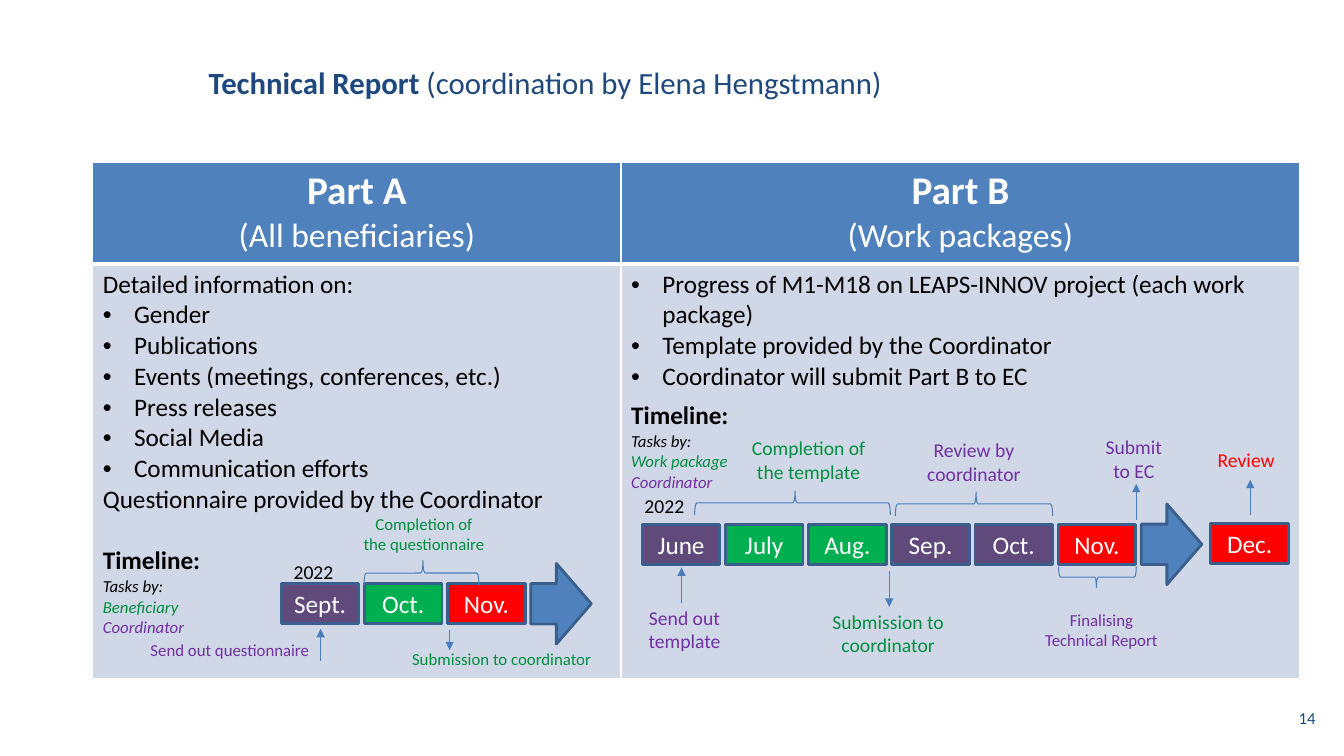
from lxml import etree
from pptx import Presentation
from pptx import util as u
from pptx.dml.color import RGBColor
from pptx.enum import shapes, text
from pptx.oxml.ns import qn

HUE = {"navy": "1F497D", "blue": "4F81BD", "edge": "3A5F8C", "thin": "4B7EBC",
       "pale": "D0D8E8", "plum": "604A7B", "lime": "00B050", "red": "FF0000",
       "green": "008E40", "violet": "7030A0", "white": "FFFFFF", "black": "000000"}
RGB = {name: RGBColor.from_string(code) for name, code in HUE.items()}
KIND = shapes.MSO_SHAPE
MID = text.PP_ALIGN.CENTER

prs = Presentation()
prs.slide_width, prs.slide_height = u.Inches(13.33), u.Inches(7.5)
slide = prs.slides.add_slide(prs.slide_layouts[5])
items = slide.shapes


def style(par, size, hue, bold=False, italic=False):
    for run in par.runs:
        font = run.font
        font.name, font.size, font.color.rgb = "Calibri", u.Pt(size), RGB[hue]
        font.bold, font.italic = bold, italic


def draw(kind, box, fill, edge, width):
    item = items.add_shape(kind, *map(u.Inches, box))
    item.shadow.inherit = False
    if fill:
        item.fill.solid()
        item.fill.fore_color.rgb = RGB[fill]
    else:
        item.fill.background()
    item.line.color.rgb = RGB[edge]
    item.line.width = u.Pt(width)
    return item


# Title
title = items.title
title.left, title.top, title.width, title.height = map(u.Inches, (1.97, 0.4, 10.45, 0.84))
title.text_frame.vertical_anchor = text.MSO_ANCHOR.MIDDLE
par = title.text_frame.paragraphs[0]
par.alignment = text.PP_ALIGN.LEFT
for words in ("Technical Report ", "(coordination by Elena Hengstmann)"):
    par.add_run().text = words
style(par, 22, "navy")
par.runs[0].font.bold = True

# Table: each line is text, style, space before
STYLES = {"head": (28, "white", True), "sub": (24, "white"), "body": (18, "black"),
          "bullet": (18, "black"), "bold": (18, "black", True),
          "task": (12, "black", False, True), "who": (12, "green", False, True),
          "lead": (12, "violet", False, True)}
CELLS = [
    [[("Part A", "head", 0), ("(All beneficiaries)", "sub", 0)],
     [("Part B", "head", 0), ("(Work packages)", "sub", 0)]],
    [[("Detailed information on:", "body", 0), ("Gender", "bullet", 0),
      ("Publications", "bullet", 0),
      ("Events (meetings, conferences, etc.)", "bullet", 0),
      ("Press releases", "bullet", 0), ("Social Media", "bullet", 0),
      ("Communication efforts", "bullet", 0),
      ("Questionnaire provided by the Coordinator", "body", 0),
      ("Timeline:", "bold", 22), ("Tasks by:", "task", 0),
      ("Beneficiary", "who", 0), ("Coordinator", "lead", 0)],
     [("Progress of M1-M18 on LEAPS-INNOV project (each work package)", "bullet", 0),
      ("Template provided by the Coordinator", "bullet", 0),
      ("Coordinator will submit Part B to EC", "bullet", 0),
      ("Timeline:", "bold", 6), ("Tasks by:", "task", 0),
      ("Work package", "who", 0), ("Coordinator", "lead", 0)]]]
table = items.add_table(2, 2, *map(u.Inches, (0.92, 1.61, 11.97, 5.12))).table
for col, width in zip(table.columns, (5.24, 6.73)):
    col.width = u.Inches(width)
for row, height in zip(table.rows, (1.01, 4.11)):
    row.height = u.Inches(height)
for r, row in enumerate(CELLS):
    for c, lines in enumerate(row):
        cell = table.cell(r, c)
        cell.text_frame.text = "\n".join(line[0] for line in lines)
        for par, (words, look, gap) in zip(cell.text_frame.paragraphs, lines):
            if r == 0:
                par.alignment = MID
            if gap:
                par.space_before = u.Pt(gap)
            if look == "bullet":
                props = par._p.get_or_add_pPr()
                props.set("marL", str(u.Inches(0.31)))
                props.set("indent", str(-u.Inches(0.31)))
                etree.SubElement(props, qn("a:buFont")).set("typeface", "Arial")
                etree.SubElement(props, qn("a:buChar")).set("char", "•")
            style(par, *STYLES[look])
        # White cell borders, thick between header and body
        props = cell._tc.get_or_add_tcPr()
        for side in ("lnL", "lnR", "lnT", "lnB"):
            thick = (r, side) in ((0, "lnB"), (1, "lnT"))
            rim = etree.SubElement(props, qn("a:" + side), w=str(u.Pt(3 if thick else 1)))
            paint = etree.SubElement(rim, qn("a:solidFill"))
            etree.SubElement(paint, qn("a:srgbClr"), val=HUE["white"])
        cell.fill.solid()
        cell.fill.fore_color.rgb = RGB["pale" if r else "blue"]

# Month boxes, one timeline per part, each ending in a block arrow
STEP, WIDE, HIGH = 0.825, 0.77, 0.4
ROWS = [(2.79, 5.79, [("Sept.", "plum"), ("Oct.", "lime"), ("Nov.", "red")]),
        (6.37, 5.2, [("June", "plum"), ("July", "lime"), ("Aug.", "lime"),
                     ("Sep.", "plum"), ("Oct.", "plum"), ("Nov.", "red")]),
        (12.01, 5.19, [("Dec.", "red")])]
for left, top, months in ROWS:
    for i, (name, fill) in enumerate(months):
        box = draw(KIND.RECTANGLE, (left + i * STEP, top, WIDE, HIGH), fill, "edge", 2)
        frame = box.text_frame
        frame.text = name
        frame.word_wrap = False
        frame.vertical_anchor = text.MSO_ANCHOR.MIDDLE
        frame.paragraphs[0].alignment = MID
        style(frame.paragraphs[0], 18, "white")
    if len(months) > 1:
        block = draw(KIND.RIGHT_ARROW, (left + len(months) * STEP, top - HIGH / 2, 0.6, 2 * HIGH),
                     "blue", "edge", 2)
        block.adjustments[1] = 0.577

# Braces: left, top, span, depth, rotation
for left, top, span, deep, turn in [(6.89, 4.87, 1.94, 0.24, 90), (8.88, 4.88, 1.56, 0.24, 90),
                                    (10.5, 5.62, 0.77, 0.21, 270), (3.61, 5.56, 1.14, 0.25, 90)]:
    shift = (span - deep) / 2
    brace = draw(KIND.LEFT_BRACE, (left + shift, top - shift, deep, span), None, "thin", 0.75)
    brace.rotation = turn
    brace.adjustments[0], brace.adjustments[1] = 0.083, 0.487

# Labels: text, box, size, colour, fill
LABELS = [
    ("2022", (2.81, 5.51, 0.6, 0.34), 14, "black", None),
    ("Send out questionnaire", (1.39, 6.3, 1.78, 0.3), 12, "violet", "pale"),
    ("Completion of\nthe questionnaire", (3.5, 5.05, 1.41, 0.5), 12, "green", None),
    ("Submission to coordinator", (3.98, 6.39, 1.99, 0.3), 12, "green", None),
    ("2022", (6.29, 4.85, 0.6, 0.34), 14, "black", None),
    ("Send out\ntemplate", (6.31, 5.96, 0.96, 0.57), 14, "violet", "pale"),
    ("Completion of\nthe template", (7.33, 4.28, 1.38, 0.57), 14, "green", None),
    ("Submission to\ncoordinator", (8.13, 6, 1.36, 0.57), 14, "green", None),
    ("Review by\ncoordinator", (9.09, 4.3, 1.14, 0.57), 14, "violet", None),
    ("Finalising\nTechnical Report", (10.26, 6, 1.33, 0.5), 12, "violet", None),
    ("Submit\nto EC", (10.84, 4.27, 0.81, 0.57), 14, "violet", None),
    ("Review", (11.97, 4.39, 0.78, 0.34), 14, "red", None),
    ("14", (12.78, 6.97, 0.37, 0.4), 12, "navy", None)]
for words, box, size, hue, fill in LABELS:
    label = items.add_textbox(*map(u.Inches, box))
    if fill:
        label.fill.solid()
        label.fill.fore_color.rgb = RGB[fill]
    label.text_frame.text = words
    label.text_frame.word_wrap = False
    for par in label.text_frame.paragraphs:
        par.alignment = MID
        style(par, size, hue)

# Thin arrows: x, start, end
for x, start, end in [(3.18, 6.56, 6.24), (4.46, 6.25, 6.45), (6.76, 5.98, 5.63),
                      (8.82, 5.66, 6.02), (11.27, 5.16, 4.8), (12.4, 5.11, 4.76)]:
    arrow = items.add_connector(shapes.MSO_CONNECTOR.STRAIGHT,
                                *map(u.Inches, (x, start, x, end)))
    arrow.line.color.rgb = RGB["thin"]
    arrow.line.width = u.Pt(0.75)
    etree.SubElement(arrow.line._get_or_add_ln(), qn("a:tailEnd"), type="triangle")
    etree.SubElement(arrow._element.spPr, qn("a:effectLst"))

prs.save("out.pptx")
